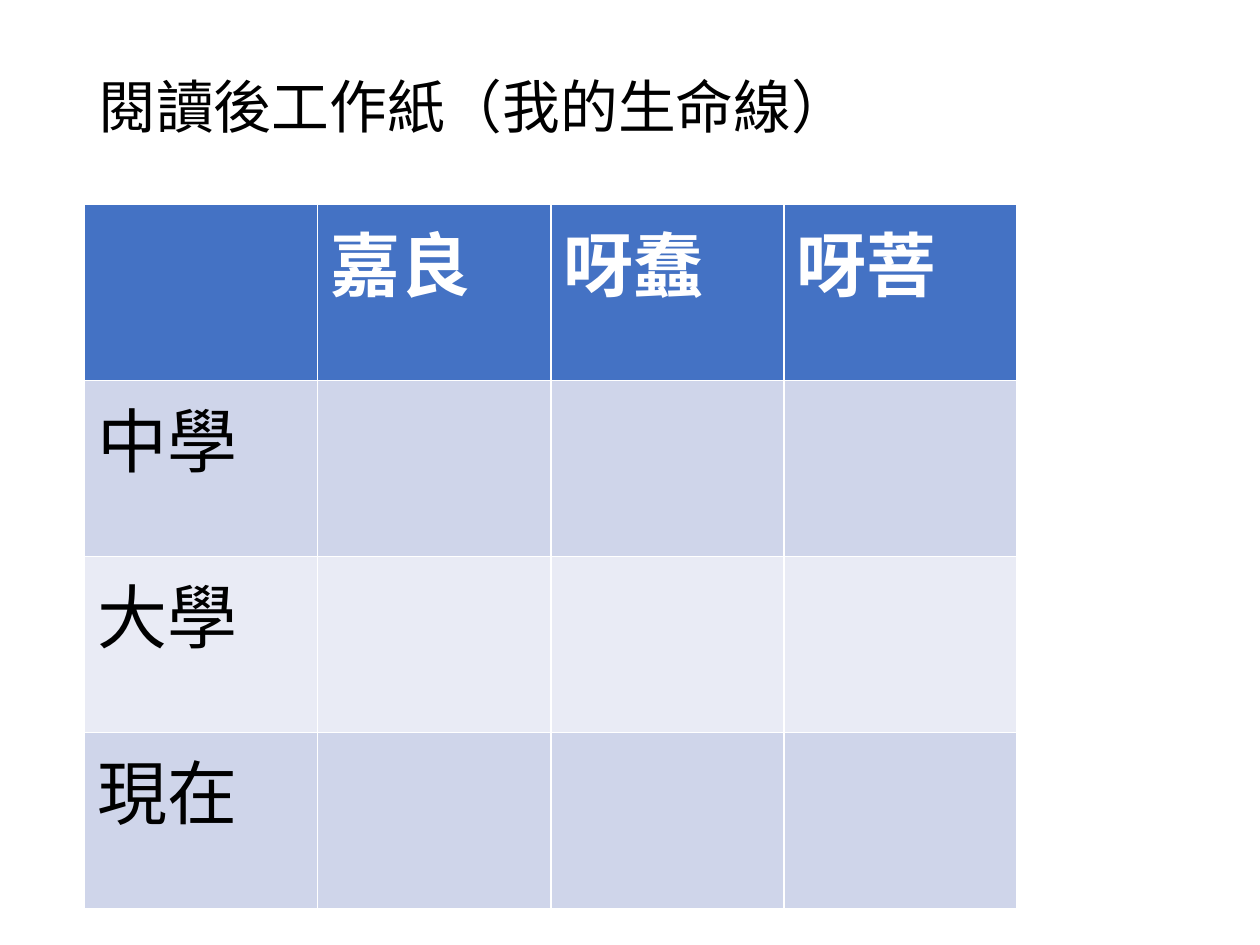
from dataclasses import dataclass

from pptx import Presentation
from pptx.dml.color import RGBColor
from pptx.enum import text
from pptx.util import Pt


@dataclass(frozen=True)
class Theme:
    header: str = "4472C4"
    bands: tuple[str, str] = ("CFD5EA", "E9EBF5")
    light: str = "FFFFFF"
    dark: str = "000000"
    title_font: str = "Calibri"
    table_font: str = "Arial"
    title_size: float = 33
    table_size: float = 40


@dataclass(frozen=True)
class TableRow:
    labels: tuple[str, ...]
    fill: str
    color: str
    bold: bool = False


THEME = Theme()
PEOPLE = ("嘉良", "呀蠢", "呀菩")
STAGES = ("中學", "大學", "現在")
COLUMN_WIDTH = 133.2
ROW_HEIGHT = 100.6


def apply_values(target, values: dict) -> None:
    for name, value in values.items():
        setattr(target, name, value)


def format_font(font, name: str, size: float, color: str, bold: bool) -> None:
    apply_values(font, {"name": name, "size": Pt(size), "bold": bold})
    font.color.rgb = RGBColor.from_string(color)


def draw_title(slide, wording: str) -> None:
    title = slide.shapes.title
    apply_values(title, {"left": Pt(49), "top": Pt(26),
                         "width": Pt(4 * COLUMN_WIDTH), "height": Pt(73.5)})
    frame = title.text_frame
    apply_values(frame, {"text": wording, "word_wrap": True,
                         "auto_size": text.MSO_AUTO_SIZE.NONE,
                         "vertical_anchor": text.MSO_ANCHOR.MIDDLE})
    paragraph = frame.paragraphs[0]
    apply_values(paragraph, {"alignment": text.PP_ALIGN.LEFT, "line_spacing": 0.9})
    format_font(paragraph.runs[0].font, THEME.title_font, THEME.title_size,
                THEME.dark, False)


def draw_row(table, index: int, row: TableRow) -> None:
    table.rows[index].height = Pt(ROW_HEIGHT)
    for cell, label in zip(table.rows[index].cells, row.labels):
        cell.fill.solid()
        cell.fill.fore_color.rgb = RGBColor.from_string(row.fill)
        if label:
            cell.text = label
            format_font(cell.text_frame.paragraphs[0].runs[0].font,
                        THEME.table_font, THEME.table_size, row.color, row.bold)


def draw_table(slide, rows: list[TableRow]) -> None:
    column_count = len(rows[0].labels)
    table = slide.shapes.add_table(
        len(rows), column_count, Pt(48.4), Pt(116.8),
        Pt(column_count * COLUMN_WIDTH), Pt(len(rows) * ROW_HEIGHT)).table
    for column in table.columns:
        column.width = Pt(COLUMN_WIDTH)
    for index, row in enumerate(rows):
        draw_row(table, index, row)


def main() -> None:
    presentation = Presentation()
    apply_values(presentation, {"slide_width": Pt(720), "slide_height": Pt(540)})
    slide = presentation.slides.add_slide(presentation.slide_layouts[5])
    draw_title(slide, "閱讀後工作紙（我的生命線）")
    header = TableRow(("", *PEOPLE), THEME.header, THEME.light, True)
    stages = [TableRow((stage, *[""] * len(PEOPLE)), THEME.bands[i % 2], THEME.dark)
              for i, stage in enumerate(STAGES)]
    draw_table(slide, [header, *stages])
    presentation.save("out.pptx")


if __name__ == "__main__":
    main()
